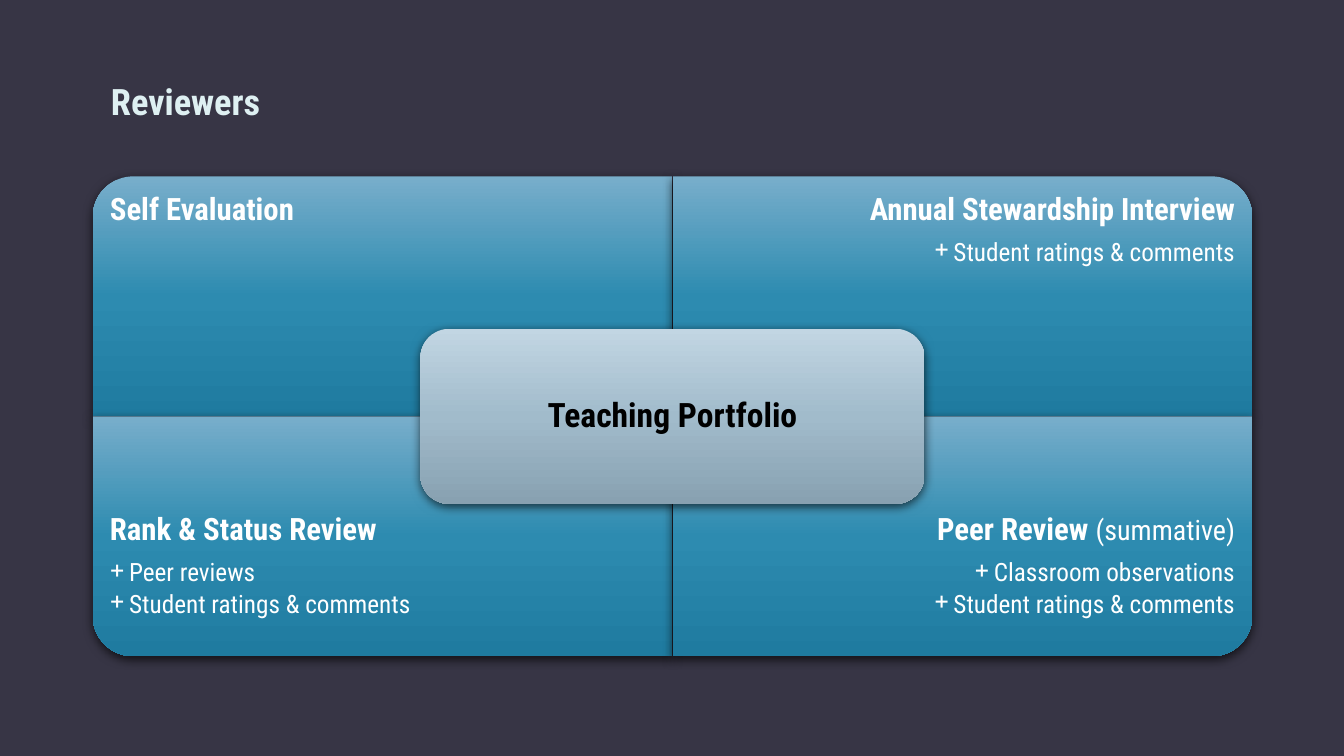
import copy
import math
import lxml.etree
import pptx
import pptx.dml.color
import pptx.enum.shapes
import pptx.enum.text
import pptx.oxml.ns
import pptx.util

Inches, Pt = pptx.util.Inches, pptx.util.Pt
Align, Anchor = pptx.enum.text.PP_ALIGN, pptx.enum.text.MSO_ANCHOR
qn = pptx.oxml.ns.qn

COLORS = {"back": "373545", "title": "DEF0F2", "light": "FFFFFF", "dark": "000000"}
FADES = {
    "blue": ["78AECB", "2D8BB0", "1F7BA0"],
    "gray": ["C2D6E3", "A1BBCB", "88A1B1"],
}


def rgb(code):
    return pptx.dml.color.RGBColor.from_string(code)


class Board:
    """A slide with a grid of two columns and two rows."""
    face = "Roboto Condensed"
    left, top = 0.92, 1.75
    wide, high = 5.75, 2.38
    curve = 0.4

    def __init__(self, deck):
        self.slide = deck.slides.add_slide(deck.slide_layouts[5])
        fill = self.slide.background.fill
        fill.solid()
        fill.fore_color.rgb = rgb(COLORS["back"])

    def spot(self, col, row):
        return Inches(self.left + col * self.wide), Inches(self.top + row * self.high)

    def font(self, font, size, color, bold):
        font.name, font.size, font.bold = self.face, Pt(size), bold
        font.color.rgb = rgb(color)

    def paint(self, shape, fade):
        """Three-step vertical gradient with a soft shadow."""
        shape.line.fill.background()
        shape.fill.gradient()
        shape.fill.gradient_angle = 270
        stops = shape._element.spPr.find(".//" + qn("a:gsLst"))
        stops.insert(1, copy.deepcopy(stops[0]))
        for stop, place, code in zip(shape.fill.gradient_stops, (0, 0.5, 1), FADES[fade]):
            stop.position = place
            stop.color.rgb = rgb(code)
        shape.shadow.inherit = False
        effects = shape._element.spPr.find(qn("a:effectLst"))
        shade = lxml.etree.SubElement(
            effects, qn("a:outerShdw"), blurRad=str(Pt(7)), dist=str(Pt(2.2)),
            dir="5400000", algn="ctr", rotWithShape="0")
        tone = lxml.etree.SubElement(shade, qn("a:srgbClr"), val=COLORS["dark"])
        lxml.etree.SubElement(tone, qn("a:alpha"), val="63000")

    def frame(self, shape, anchor, sides, above, below):
        frame = shape.text_frame
        frame.word_wrap = True
        frame.vertical_anchor = anchor
        frame.margin_left = frame.margin_right = Inches(sides)
        frame.margin_top, frame.margin_bottom = Inches(above), Inches(below)
        return frame

    def head(self, para, text, size, color, align):
        para.text, para.alignment = text, align
        para.line_spacing, para.space_after = 0.9, Pt(9)
        self.font(para.font, size, color, True)

    def item(self, para, text, align):
        para.text, para.alignment, para.level = text, align, 1
        props = para._p.get_or_add_pPr()
        props.set("marL", str(Inches(0.19)))
        props.set("indent", str(-Inches(0.19)))
        lxml.etree.SubElement(props, qn("a:buChar"), char="+")
        para.line_spacing, para.space_after = 0.9, Pt(3)
        self.font(para.font, 18, COLORS["light"], False)

    def title(self, text):
        shape = self.slide.shapes.title
        shape.left, shape.top = Inches(self.left), Inches(0.73)
        shape.width, shape.height = Inches(8.82), Inches(0.54)
        frame = self.frame(shape, Anchor.TOP, 0.18, 0.05, 0.05)
        frame.auto_size = pptx.enum.text.MSO_AUTO_SIZE.NONE
        para = frame.paragraphs[0]
        para.text, para.alignment, para.line_spacing = text, Align.LEFT, 1.0
        self.font(para.font, 26, COLORS["title"], True)

    def panel(self, col, row, text, items, note=""):
        """A cell whose outer corner is rounded."""
        mid_x, mid_y = self.spot(1, 1)
        far_x, far_y = self.spot(col * 2, row * 2)
        turn_x = Inches(self.curve) * (2 * col - 1)
        turn_y = Inches(self.curve) * (2 * row - 1)
        angles = [math.radians(step * 5) for step in range(19)]
        arc = [(far_x - turn_x * (1 - math.sin(a)), far_y - turn_y * (1 - math.cos(a)))
               for a in angles]
        path = self.slide.shapes.build_freeform(mid_x, mid_y)
        path.add_line_segments([(mid_x, far_y), *arc, (far_x, mid_y)], close=True)
        shape = path.convert_to_shape()
        self.paint(shape, "blue")

        # Text keeps clear of the centre card
        align = Align.RIGHT if col else Align.LEFT
        if row:
            frame = self.frame(shape, Anchor.MIDDLE, 0.17, 0.77, 0.17)
        else:
            frame = self.frame(shape, Anchor.TOP, 0.17, 0.17, 0.77)
        para = frame.paragraphs[0]
        self.head(para, text, 22, COLORS["light"], align)
        if note:
            run = para.add_run()
            run.text = note
            run.font.size, run.font.bold = Pt(20), False
        for entry in items:
            self.item(frame.add_paragraph(), entry, align)

    def card(self, text, cols, rows):
        """A rounded card centred on the grid."""
        x, y = self.spot(1 - cols / 2, 1 - rows / 2)
        shape = self.slide.shapes.add_shape(
            pptx.enum.shapes.MSO_SHAPE.ROUNDED_RECTANGLE, x, y,
            Inches(cols * self.wide), Inches(rows * self.high))
        self.paint(shape, "gray")
        frame = self.frame(shape, Anchor.MIDDLE, 0.18, 0.18, 0.18)
        self.head(frame.paragraphs[0], text, 24, COLORS["dark"], Align.CENTER)


def main():
    deck = pptx.Presentation()
    deck.slide_width, deck.slide_height = Inches(13.33), Inches(7.5)
    board = Board(deck)
    board.title("Reviewers")

    # Four kinds of review
    ratings = "Student ratings & comments"
    board.panel(0, 0, "Self Evaluation", [])
    board.panel(1, 0, "Annual Stewardship Interview", [ratings])
    board.panel(0, 1, "Rank & Status Review", ["Peer reviews", ratings])
    board.panel(1, 1, "Peer Review ", ["Classroom observations", ratings], "(summative)")

    # Shared centre
    board.card("Teaching Portfolio", 0.87, 0.73)
    deck.save("out.pptx")


if __name__ == "__main__":
    main()
